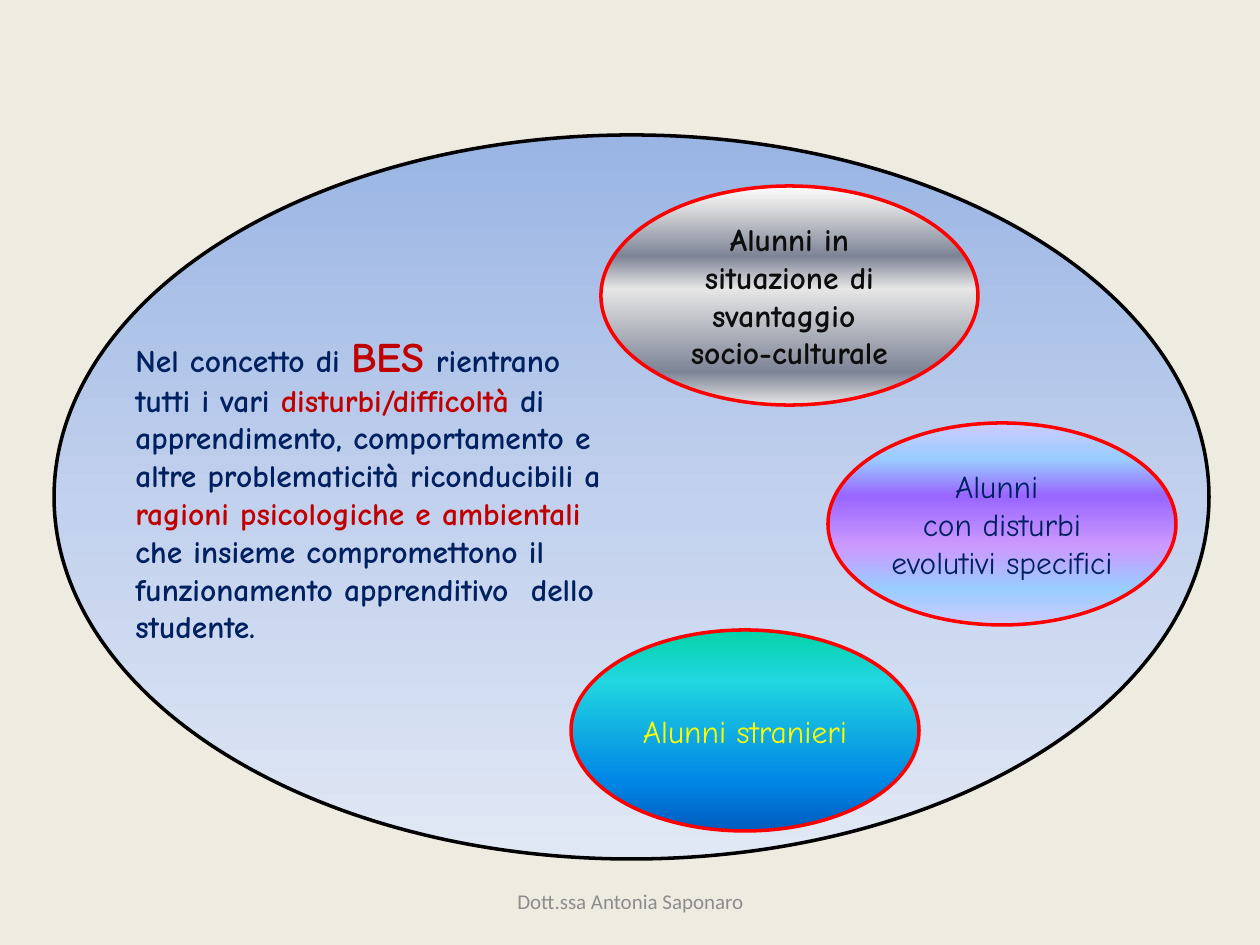
"""Build the slide on pupils with special educational needs (BES)."""
from dataclasses import dataclass

from lxml.etree import SubElement
from pptx import Presentation
from pptx.dml.color import RGBColor
from pptx.enum.shapes import MSO_SHAPE
from pptx.enum.text import MSO_ANCHOR, PP_ALIGN
from pptx.oxml.ns import qn
from pptx.util import Emu, Pt


@dataclass(frozen=True)
class Theme:
    paper: str = "EEECE1"
    navy: str = "002060"
    dark: str = "C00000"
    ink: str = "0D0D0D"
    gold: str = "FFFF00"
    gray: str = "8C8C8C"
    black: str = "000000"
    red: str = "FF0000"
    sky: tuple = ((0, "9AB5E4"), (52, "C2D1ED"), (100, "E1E8F5"))
    steel: tuple = ((0, "FFFFFF"), (7, "E6E6E6"), (32, "7D8496"),
                    (47, "E6E6E6"), (85, "7D8496"), (100, "E6E6E6"))
    lilac: tuple = ((0, "CCCCFF"), (18, "99CCFF"), (36, "9966FF"),
                    (61, "CC99FF"), (82, "99CCFF"), (100, "CCCCFF"))
    ocean: tuple = ((0, "03D4A8"), (25, "21D6E0"), (75, "0087E6"), (100, "005CBF"))
    hand: str = "Comic Neue"
    sans: str = "Calibri"
    big: int = 24
    body: int = 18
    small: int = 12
    edge: int = 2


T = Theme()
SIZE = (1260, 945)
SCALE = 914400 / 126

OVALS = [
    ((54, 135, 1155, 724), T.sky, T.black, T.ink, False, []),
    ((601, 186, 377, 219), T.steel, T.red, T.ink, True,
     ["Alunni in situazione di svantaggio ", "socio-culturale"]),
    ((828, 423, 348, 202), T.lilac, T.red, T.navy, False,
     ["Alunni ", "con disturbi evolutivi specifici"]),
    ((571, 630, 348, 201), T.ocean, T.red, T.gold, False, ["Alunni stranieri"]),
]
INTRO = [
    ("Nel concetto di ", T.navy, T.body),
    ("BES", T.dark, T.big),
    (" rientrano tutti i vari ", T.navy, T.body),
    ("disturbi/difficoltà", T.dark, T.body),
    (" di apprendimento, comportamento e altre problematicità riconducibili a ",
     T.navy, T.body),
    ("ragioni psicologiche e ambientali ", T.dark, T.body),
    ("che insieme compromettono il funzionamento apprenditivo  dello studente.",
     T.navy, T.body),
]
INTRO_BOX = (123, 324, 515, 369)
FOOTER = "Dott.ssa Antonia Saponaro"
FOOTER_BOX = (431, 876, 399, 50)


def px(n):
    return Emu(round(n * SCALE))


def place(box):
    return [px(n) for n in box]


def rgb(code):
    return RGBColor.from_string(code)


def add_run(para, text, color, size, face=T.hand, bold=False):
    run = para.add_run()
    run.text = text
    font = run.font
    font.name, font.size, font.bold = face, Pt(size), bold
    font.color.rgb = rgb(color)


def shade(shape, stops):
    shape.fill.gradient()
    shape.fill.gradient_angle = 270
    ramp = shape._element.spPr.find(qn("a:gradFill")).find(qn("a:gsLst"))
    for stop in list(ramp):
        ramp.remove(stop)
    for pos, code in stops:
        stop = SubElement(ramp, qn("a:gs"), pos=str(pos * 1000))
        SubElement(stop, qn("a:srgbClr"), val=code)


def add_oval(slide, box, stops, edge, color, bold, lines):
    oval = slide.shapes.add_shape(MSO_SHAPE.OVAL, *place(box))
    oval.shadow.inherit = False
    shade(oval, stops)
    oval.line.color.rgb = rgb(edge)
    oval.line.width = Pt(T.edge)
    frame = oval.text_frame
    frame.word_wrap = True
    frame.vertical_anchor = MSO_ANCHOR.MIDDLE
    for i, line in enumerate(lines):
        para = frame.add_paragraph() if i else frame.paragraphs[0]
        para.alignment = PP_ALIGN.CENTER
        add_run(para, line, color, T.body, bold=bold)


def add_text(slide, box, anchor, align):
    frame = slide.shapes.add_textbox(*place(box)).text_frame
    frame.word_wrap = True
    frame.vertical_anchor = anchor
    para = frame.paragraphs[0]
    para.alignment = align
    return para


def main():
    deck = Presentation()
    deck.slide_width, deck.slide_height = place(SIZE)
    slide = deck.slides.add_slide(deck.slide_layouts[6])
    back = slide.background.fill
    back.solid()
    back.fore_color.rgb = rgb(T.paper)

    field, *groups = OVALS
    add_oval(slide, *field)
    intro = add_text(slide, INTRO_BOX, MSO_ANCHOR.TOP, PP_ALIGN.LEFT)
    for text, color, size in INTRO:
        add_run(intro, text, color, size, bold=True)
    for group in groups:
        add_oval(slide, *group)
    footer = add_text(slide, FOOTER_BOX, MSO_ANCHOR.MIDDLE, PP_ALIGN.CENTER)
    add_run(footer, FOOTER, T.gray, T.small, T.sans)
    deck.save("out.pptx")


if __name__ == "__main__":
    main()
